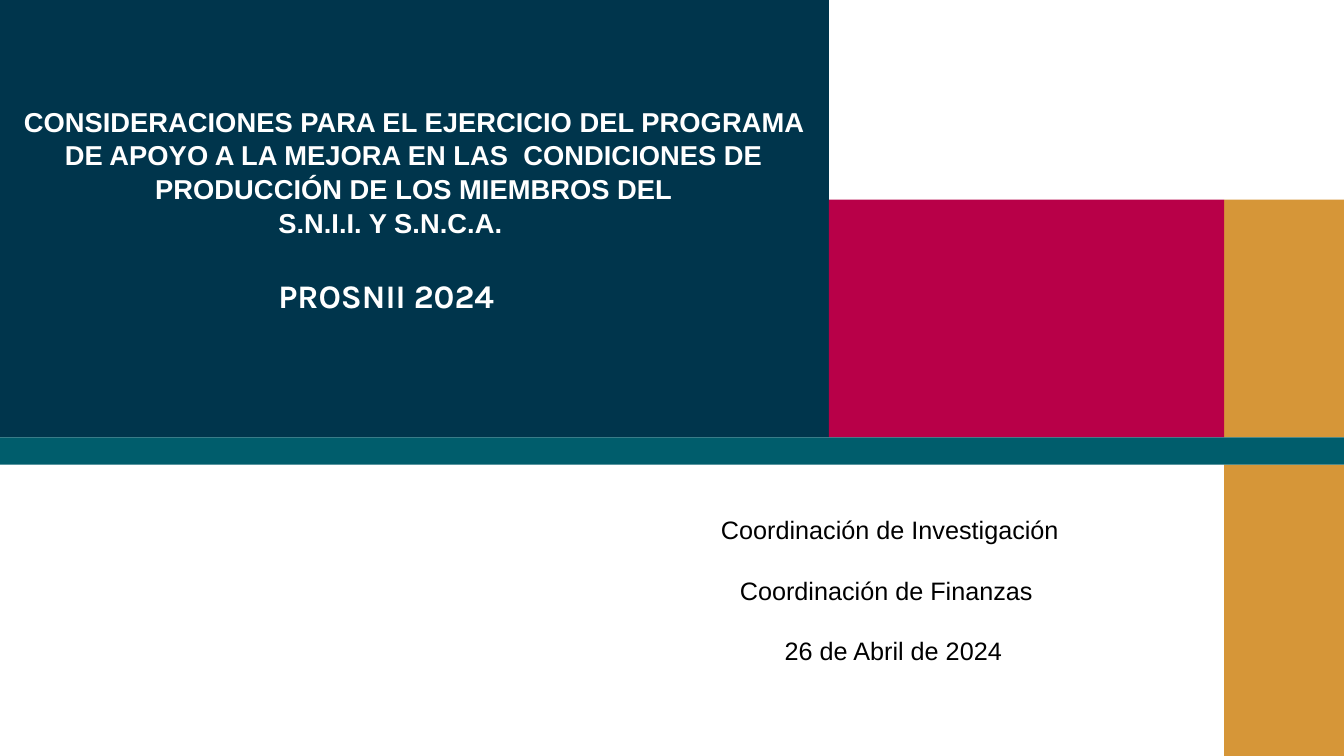
from pptx import Presentation
from pptx.dml.color import RGBColor
from pptx.enum.shapes import MSO_SHAPE
from pptx.enum.text import MSO_ANCHOR, MSO_AUTO_SIZE, PP_ALIGN
from pptx.util import Inches, Pt

COLORS = {"navy": "00354C", "gold": "D69638", "crimson": "B80048",
          "teal": "005D6C", "white": "FFFFFF", "black": "000000"}
WIDTH, HEIGHT = 13.33, 7.5
NAVY_RIGHT, GOLD_LEFT = 8.22, 12.14
UPPER_TOP, BAND_TOP, BAND_BOTTOM = 1.98, 4.34, 4.61


def add_block(slide, color, left, top, right, bottom):
    block = slide.shapes.add_shape(
        MSO_SHAPE.RECTANGLE, Inches(left), Inches(top),
        Inches(right - left), Inches(bottom - top))
    block.fill.solid()
    block.fill.fore_color.rgb = RGBColor.from_string(COLORS[color])
    block.line.fill.background()
    block.shadow.inherit = False


def prepare_frame(shape, top_inset):
    frame = shape.text_frame
    frame.word_wrap = True
    frame.auto_size = MSO_AUTO_SIZE.NONE
    frame.vertical_anchor = MSO_ANCHOR.TOP
    frame.margin_left = frame.margin_right = frame.margin_bottom = 0
    frame.margin_top = Inches(top_inset)
    return frame


def format_paragraph(paragraph, text, size, color, bold=False, font="Arial",
                     align=PP_ALIGN.CENTER, spacing=1.0, before=0):
    paragraph.text = text
    paragraph.alignment = align
    paragraph.line_spacing = spacing
    paragraph.space_before = Pt(before)
    paragraph.font.name = font
    paragraph.font.size = Pt(size)
    paragraph.font.bold = bold
    paragraph.font.color.rgb = RGBColor.from_string(COLORS[color])


def add_background(slide):
    add_block(slide, "navy", 0, 0, NAVY_RIGHT, BAND_TOP)
    add_block(slide, "gold", GOLD_LEFT, BAND_BOTTOM, WIDTH, HEIGHT)
    add_block(slide, "gold", GOLD_LEFT, UPPER_TOP, WIDTH, BAND_TOP)
    add_block(slide, "crimson", NAVY_RIGHT, UPPER_TOP, GOLD_LEFT, BAND_TOP)
    add_block(slide, "teal", 0, BAND_TOP, WIDTH, BAND_BOTTOM)


def add_heading(slide, left, top, width):
    # Title placeholder, brought in front of the colour blocks
    title = slide.shapes.title
    title.left, title.top = Inches(left), Inches(top)
    title.width, title.height = Inches(width), Inches(1.01)
    slide.shapes._spTree.append(title._element)
    format_paragraph(
        prepare_frame(title, 0.01).paragraphs[0],
        "CONSIDERACIONES PARA EL EJERCICIO DEL PROGRAMA DE APOYO A LA MEJORA "
        "EN LAS  CONDICIONES DE PRODUCCIÓN DE LOS MIEMBROS DEL",
        19.5, "white", bold=True, spacing=1.03)

    # Programme name below the title
    box = slide.shapes.add_textbox(Inches(left + 2.62), Inches(top + 1.01),
                                   Inches(2.41), Inches(1.1))
    frame = prepare_frame(box, 0.02)
    format_paragraph(frame.paragraphs[0], "S.N.I.I. Y S.N.C.A.", 19.5, "white",
                     bold=True, align=PP_ALIGN.LEFT)
    format_paragraph(frame.add_paragraph(), "PROSNII 2024", 23.5, "white",
                     bold=True, font="Karla", align=PP_ALIGN.LEFT, before=26)


def add_credits(slide, left, top, width, height):
    box = slide.shapes.add_textbox(Inches(left), Inches(top),
                                   Inches(width), Inches(height))
    frame = prepare_frame(box, 0.01)
    format_paragraph(frame.paragraphs[0], "Coordinación de Investigación",
                     18, "black", spacing=1.02)
    for line in ("Coordinación de Finanzas ", " 26 de Abril de 2024"):
        format_paragraph(frame.add_paragraph(), line, 18, "black", spacing=1.99)


def main():
    presentation = Presentation()
    presentation.slide_width = Inches(WIDTH)
    presentation.slide_height = Inches(HEIGHT)
    slide = presentation.slides.add_slide(presentation.slide_layouts[5])
    add_background(slide)
    add_heading(slide, 0.14, 1.02, 7.93)
    add_credits(slide, 6.25, 5.09, 5.15, 1.22)
    presentation.save("out.pptx")


if __name__ == "__main__":
    main()
